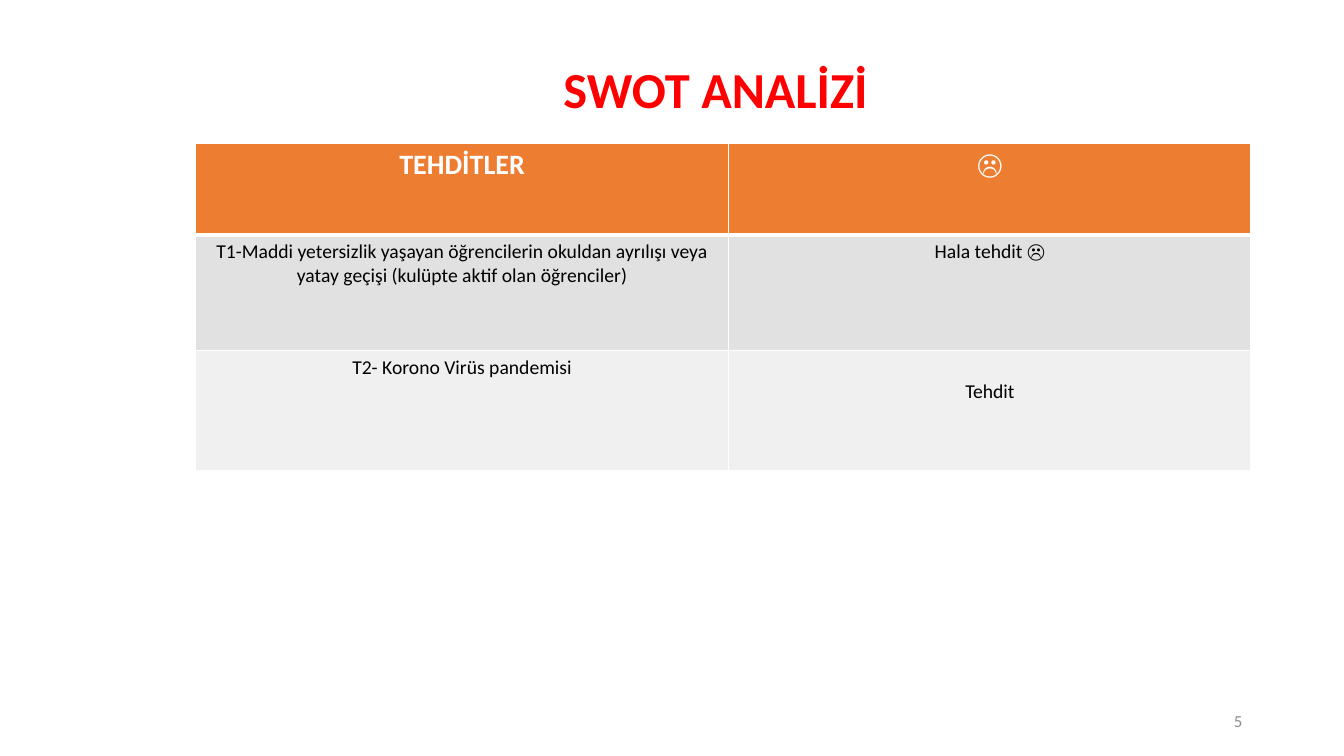
from dataclasses import dataclass

from lxml import etree
from pptx import Presentation
from pptx.dml.color import RGBColor
from pptx.enum.text import MSO_ANCHOR, MSO_AUTO_SIZE, PP_ALIGN
from pptx.oxml.ns import qn
from pptx.util import Inches, Pt

CENTER, RIGHT = PP_ALIGN.CENTER, PP_ALIGN.RIGHT
MIDDLE = MSO_ANCHOR.MIDDLE
GROW = MSO_AUTO_SIZE.SHAPE_TO_FIT_TEXT
TITLE_ONLY = 5


@dataclass(frozen=True)
class Theme:
    font: str = "Calibri"
    red: str = "FF0000"
    orange: str = "ED7D31"
    white: str = "FFFFFF"
    black: str = "000000"
    muted: str = "8C8C8C"
    bands: tuple = ("E1E1E1", "F0F0F0")
    title_size: int = 36
    header_size: int = 20
    body_size: int = 14
    number_size: int = 12


class Deck:
    """Places elements on a grid of 100 columns by 100 rows."""

    def __init__(self, theme):
        self.theme = theme
        self.prs = Presentation()
        self.prs.slide_width, self.prs.slide_height = Inches(13.33), Inches(7.5)
        self.slide = self.prs.slides.add_slide(self.prs.slide_layouts[TITLE_ONLY])

    def x(self, cols):
        return round(self.prs.slide_width * cols / 100)

    def y(self, rows):
        return round(self.prs.slide_height * rows / 100)

    def box(self, left, top, width, height):
        return self.x(left), self.y(top), self.x(width), self.y(height)

    def add_text(self, tf, text, size, color, bold=False, align=CENTER):
        tf.word_wrap = True
        p = tf.paragraphs[0]
        p.alignment = align
        r = p.add_run()
        r.text = text
        style = {"name": self.theme.font, "size": Pt(size), "bold": bold}
        for name, value in style.items():
            setattr(r.font, name, value)
        r.font.color.rgb = RGBColor.from_string(color)

    def title(self, text, *place):
        sp = self.slide.shapes.title
        for name, value in zip(("left", "top", "width", "height"), self.box(*place)):
            setattr(sp, name, value)
        self.add_text(sp.text_frame, text, self.theme.title_size, self.theme.red, True)
        sp.text_frame.auto_size = GROW

    def page_number(self, text, *place):
        tf = self.slide.shapes.add_textbox(*self.box(*place)).text_frame
        tf.vertical_anchor = MIDDLE
        self.add_text(tf, text, self.theme.number_size, self.theme.muted, align=RIGHT)

    def border(self, cell, widths):
        tcPr = cell._tc.get_or_add_tcPr()
        for side, width in widths.items():
            ln = etree.SubElement(tcPr, qn(f"a:ln{side}"), w=str(Pt(width)))
            fill = etree.SubElement(ln, qn("a:solidFill"))
            etree.SubElement(fill, qn("a:srgbClr"), val=self.theme.white)

    def table(self, rows, left, top, widths, heights):
        th = self.theme
        place = self.box(left, top, sum(widths), sum(heights))
        table = self.slide.shapes.add_table(len(rows), len(widths), *place).table
        for column, width in zip(table.columns, widths):
            column.width = self.x(width)
        for i, (row, height) in enumerate(zip(rows, heights)):
            table.rows[i].height = self.y(height)
            header = i == 0
            fill = th.orange if header else th.bands[(i - 1) % 2]
            size = th.header_size if header else th.body_size
            color = th.white if header else th.black
            for j, text in enumerate(row):
                cell = table.cell(i, j)
                self.add_text(cell.text_frame, text, size, color, header)
                self.border(cell, {"L": 1, "R": 1, "T": 3 if i == 1 else 1,
                                   "B": 3 if header else 1})
                cell.fill.solid()
                cell.fill.fore_color.rgb = RGBColor.from_string(fill)
        return table


def main():
    deck = Deck(Theme())

    # Title
    deck.title("SWOT ANALİZİ", 24.6, 6.93, 57.3, 9.47)

    # Threats and their current status
    threats = deck.table(
        [("TEHDİTLER", "☹"),
         ("T1-Maddi yetersizlik yaşayan öğrencilerin okuldan ayrılışı veya "
          "yatay geçişi (kulüpte aktif olan öğrenciler)", "Hala tehdit ☹"),
         ("T2- Korono Virüs pandemisi", "Tehdit")],
        14.55, 18.93, widths=(39.68, 38.86), heights=(12.13, 15.33, 15.87))
    # The last status sits one line lower
    threats.cell(2, 1).margin_top = Inches(0.29)

    # Page number
    deck.page_number("5", 70.67, 92.67, 22.5, 5.33)

    deck.prs.save("out.pptx")


if __name__ == "__main__":
    main()
